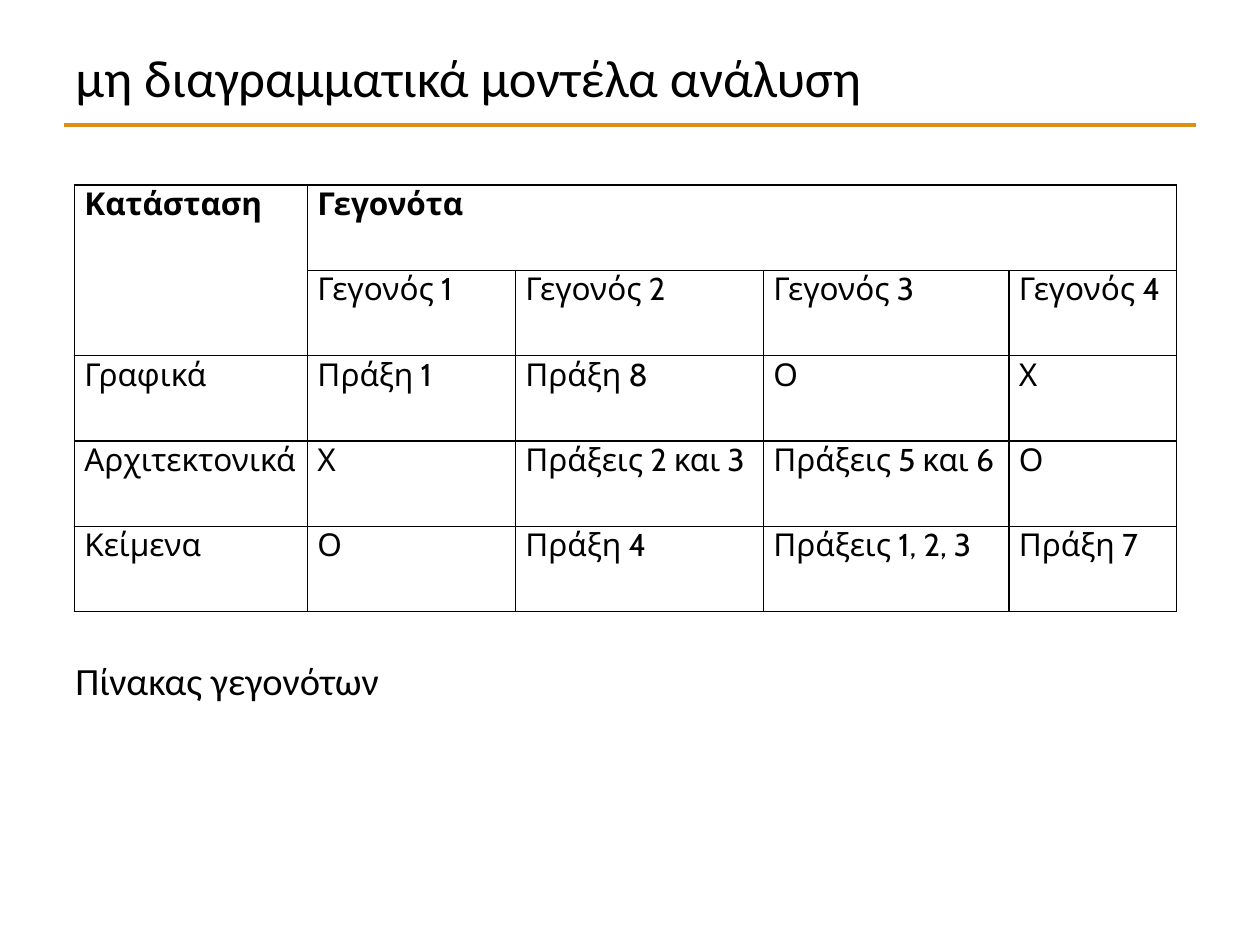
from dataclasses import dataclass

import lxml.etree
import pptx
import pptx.dml.color
import pptx.enum.shapes
import pptx.enum.text
import pptx.oxml.ns
import pptx.util
from pptx.util import Cm


@dataclass(frozen=True)
class Theme:
    ink: str = "000000"
    accent: str = "DC9016"
    text_font: str = "Calibri"
    table_font: str = "Cabin"
    title_size: float = 30
    caption_size: float = 22
    table_size: float = 18
    rule_width: float = 2.5
    border_width: float = 1


@dataclass(frozen=True)
class TextBlock:
    text: str
    left: float
    top: float
    width: float
    height: float
    size: float
    anchor: pptx.enum.text.MSO_ANCHOR


@dataclass(frozen=True)
class Merge:
    first: tuple[int, int]
    last: tuple[int, int]


THEME = Theme()
ANCHOR = pptx.enum.text.MSO_ANCHOR

TEXT_BLOCKS = [
    TextBlock("μη διαγραμματικά μοντέλα ανάλυση", 1.27, 0.76, 22.86, 1.55,
              THEME.title_size, ANCHOR.MIDDLE),
    TextBlock("Πίνακας γεγονότων", 1.27, 13.13, 22.86, 4.39,
              THEME.caption_size, ANCHOR.TOP),
]

EVENT_ROWS = [
    ["Κατάσταση", "Γεγονότα", "", "", ""],
    ["", "Γεγονός 1", "Γεγονός 2", "Γεγονός 3", "Γεγονός 4"],
    ["Γραφικά", "Πράξη 1", "Πράξη 8", "Ο", "Χ"],
    ["Αρχιτεκτονικά", "Χ", "Πράξεις 2 και 3", "Πράξεις 5 και 6", "Ο"],
    ["Κείμενα", "Ο", "Πράξη 4", "Πράξεις 1, 2, 3", "Πράξη 7"],
]
COLUMN_WIDTHS = [4.7, 4.19, 5, 4.95, 3.38]
ROW_HEIGHT = 1.72
HEADER_MERGES = [Merge((0, 0), (1, 0)), Merge((0, 1), (0, 4))]


def rgb(colour: str) -> pptx.dml.color.RGBColor:
    return pptx.dml.color.RGBColor.from_string(colour)


def apply_format(target, values: dict) -> None:
    for name, value in values.items():
        setattr(target, name, value)


def write_text(paragraph, text: str, font: str, size: float, bold: bool = False) -> None:
    run = paragraph.add_run()
    run.text = text
    apply_format(run.font, {"name": font, "size": pptx.util.Pt(size), "bold": bold})
    run.font.color.rgb = rgb(THEME.ink)


def add_text_block(slide, block: TextBlock) -> None:
    shape = slide.shapes.add_textbox(Cm(block.left), Cm(block.top),
                                     Cm(block.width), Cm(block.height))
    apply_format(shape.text_frame, {"word_wrap": True, "vertical_anchor": block.anchor})
    write_text(shape.text_frame.paragraphs[0], block.text, THEME.text_font, block.size)


def add_title_rule(slide) -> None:
    connector = slide.shapes.add_connector(
        pptx.enum.shapes.MSO_CONNECTOR.STRAIGHT, Cm(1.3), Cm(2.52), Cm(24.1), Cm(2.52))
    connector.line.color.rgb = rgb(THEME.accent)
    connector.line.width = pptx.util.Pt(THEME.rule_width)
    properties = connector.element.spPr
    lxml.etree.SubElement(properties, pptx.oxml.ns.qn("a:effectLst"))


def add_borders(cell) -> None:
    """Outline a cell; border elements must precede its fill element."""
    qn = pptx.oxml.ns.qn
    properties = cell._tc.get_or_add_tcPr()
    for index, side in enumerate(("a:lnL", "a:lnR", "a:lnT", "a:lnB")):
        border = lxml.etree.Element(qn(side), w=str(pptx.util.Pt(THEME.border_width)))
        fill = lxml.etree.SubElement(border, qn("a:solidFill"))
        lxml.etree.SubElement(fill, qn("a:srgbClr"), val=THEME.ink)
        properties.insert(index, border)


def add_event_table(slide) -> None:
    table = slide.shapes.add_table(
        len(EVENT_ROWS), len(COLUMN_WIDTHS), Cm(1.5), Cm(3.73),
        Cm(sum(COLUMN_WIDTHS)), Cm(ROW_HEIGHT * len(EVENT_ROWS))).table
    apply_format(table, {"first_row": False, "horz_banding": False})
    for column, width in zip(table.columns, COLUMN_WIDTHS):
        column.width = Cm(width)
    for row in table.rows:
        row.height = Cm(ROW_HEIGHT)

    cell_format = {"margin_left": Cm(0.2), "margin_right": Cm(0.2),
                   "margin_top": 0, "margin_bottom": 0, "vertical_anchor": ANCHOR.TOP}
    for row_index, texts in enumerate(EVENT_ROWS):
        for column_index, text in enumerate(texts):
            cell = table.cell(row_index, column_index)
            apply_format(cell, cell_format)
            cell.fill.background()
            add_borders(cell)
            if text:
                paragraph = cell.text_frame.paragraphs[0]
                paragraph.space_after = pptx.util.Pt(3)
                write_text(paragraph, text, THEME.table_font, THEME.table_size,
                           bold=row_index == 0)
    for merge in HEADER_MERGES:
        table.cell(*merge.first).merge(table.cell(*merge.last))


def main() -> None:
    presentation = pptx.Presentation()
    apply_format(presentation, {"slide_width": Cm(25.4), "slide_height": Cm(19.05)})
    slide = presentation.slides.add_slide(presentation.slide_layouts[6])
    add_title_rule(slide)
    for block in TEXT_BLOCKS:
        add_text_block(slide, block)
    add_event_table(slide)
    presentation.save("out.pptx")


if __name__ == "__main__":
    main()
